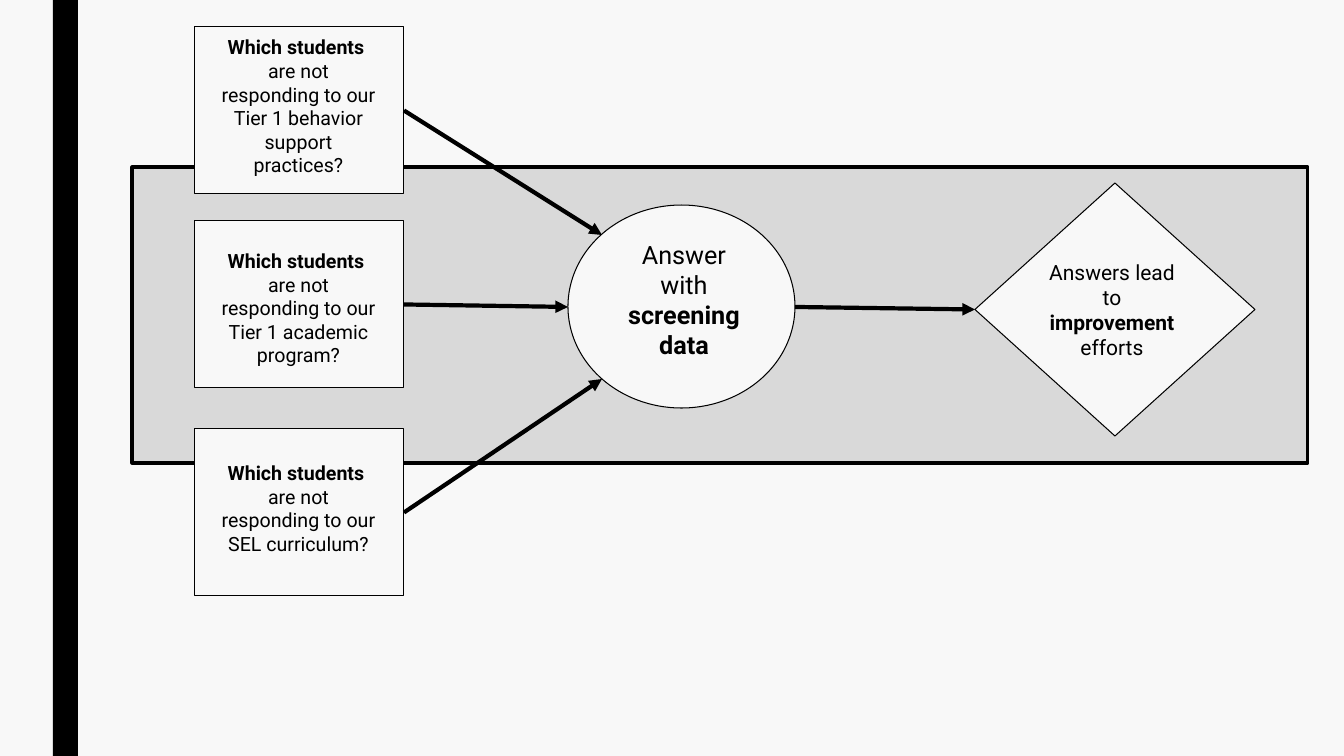
from pptx import Presentation
from pptx.dml.color import RGBColor
from pptx.enum.shapes import MSO_CONNECTOR, MSO_SHAPE
from pptx.enum.text import MSO_ANCHOR, PP_ALIGN
from pptx.oxml.ns import qn
from pptx.util import Pt
from lxml import etree

RECTANGLE, OVAL, DIAMOND = MSO_SHAPE.RECTANGLE, MSO_SHAPE.OVAL, MSO_SHAPE.DIAMOND
STRAIGHT = MSO_CONNECTOR.STRAIGHT
MIDDLE, CENTER = MSO_ANCHOR.MIDDLE, PP_ALIGN.CENTER
LEFT_SIDE, RIGHT_SIDE = 1, 3
PX = 914400 / 100.8
BLACK, PAPER, BAND_GRAY = "000000", "F8F8F8", "D9D9D9"


def color(hex_string):
    return RGBColor.from_string(hex_string)


def emu(*lengths):
    return [round(length * PX) for length in lengths]


presentation = Presentation()
presentation.slide_width, presentation.slide_height = emu(1344, 756)
slide = presentation.slides.add_slide(presentation.slide_layouts[6])
slide.background.fill.solid()
slide.background.fill.fore_color.rgb = color(PAPER)

# Shapes, back to front: key, kind, box, fill, line width
shape_rows = [
    ("side bar", RECTANGLE, (53, 0, 25, 756), BLACK, 0),
    ("band", RECTANGLE, (132, 167, 1176, 296), BAND_GRAY, 2.25),
    ("behavior", RECTANGLE, (195, 27, 209, 167), PAPER, 0.75),
    ("academic", RECTANGLE, (195, 221, 209, 167), PAPER, 0.75),
    ("SEL", RECTANGLE, (195, 429, 209, 167), PAPER, 0.75),
    ("screening", OVAL, (568, 205, 227, 203), PAPER, 0.75),
    ("improvement", DIAMOND, (975, 183, 280, 253), PAPER, 0.75),
]
shapes = {}
for key, kind, box, fill, line_width in shape_rows:
    shape = slide.shapes.add_shape(kind, *emu(*box))
    shape.shadow.inherit = False
    shape.fill.solid()
    shape.fill.fore_color.rgb = color(fill)
    if line_width:
        shape.line.color.rgb = color(BLACK)
        shape.line.width = Pt(line_width)
    else:
        shape.line.fill.background()
    shapes[key] = shape

# Texts: box, size, runs as (text, bold)
question = ("Which students ", True)
text_rows = [
    ((209, 45, 179, 122), 14,
     [question, (" are not responding to our Tier 1 behavior support practices?", False)]),
    ((209, 247, 179, 122), 14,
     [question, (" are not responding to our Tier 1 academic program?", False)]),
    ((209, 447, 179, 122), 14,
     [question, (" are not responding to our SEL curriculum?", False)]),
    ((613, 246, 142, 107), 18,
     [("Answer with ", False), ("screening data", True)]),
    ((1030, 256, 164, 107), 15,
     [("Answers lead to ", False), ("improvement", True), (" efforts", False)]),
]
for box, size, runs in text_rows:
    text_frame = slide.shapes.add_textbox(*emu(*box)).text_frame
    text_frame.word_wrap = True
    text_frame.vertical_anchor = MIDDLE
    text_frame.margin_left = text_frame.margin_right = emu(10)[0]
    text_frame.margin_top = text_frame.margin_bottom = emu(10)[0]
    paragraph = text_frame.paragraphs[0]
    paragraph.alignment = CENTER
    for text, bold in runs:
        run = paragraph.add_run()
        run.text = text
        run.font.name = "Roboto"
        run.font.size = Pt(size)
        run.font.bold = bold
        run.font.color.rgb = color(BLACK)

# Arrows: start and end points, shapes joined at the right and left sides
arrow_rows = [
    ((404, 110, 602, 235), "behavior", None),
    ((404, 304, 568, 307), "academic", None),
    ((404, 512, 602, 379), "SEL", None),
    ((795, 307, 975, 310), None, "improvement"),
]
for points, source, target in arrow_rows:
    arrow = slide.shapes.add_connector(STRAIGHT, *emu(*points))
    if source:
        arrow.begin_connect(shapes[source], RIGHT_SIDE)
    if target:
        arrow.end_connect(shapes[target], LEFT_SIDE)
    arrow.line.color.rgb = color(BLACK)
    arrow.line.width = Pt(3)
    properties = arrow._element.spPr
    etree.SubElement(properties.find(qn("a:ln")), qn("a:tailEnd"), type="triangle")
    etree.SubElement(properties, qn("a:effectLst"))

presentation.save("out.pptx")
